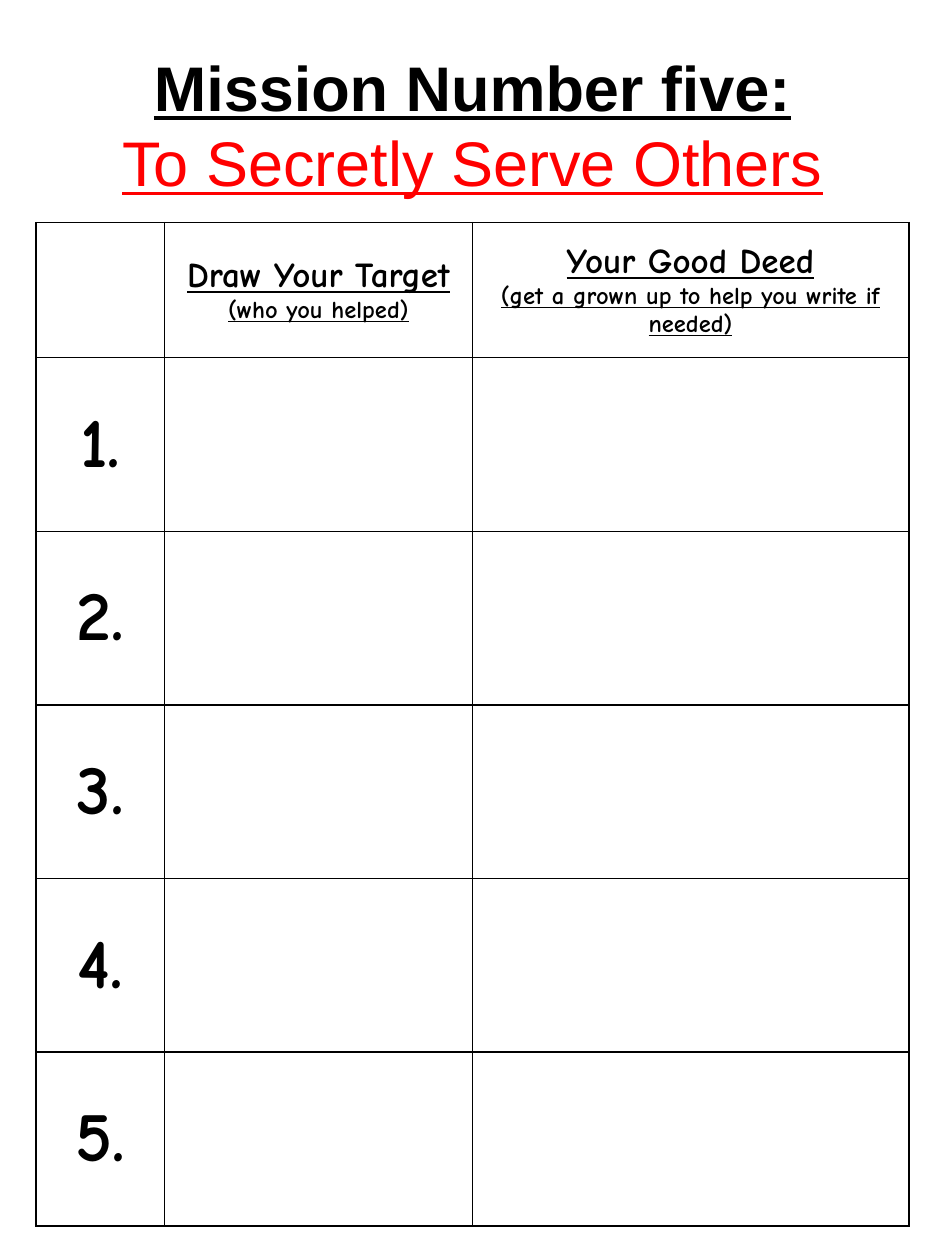
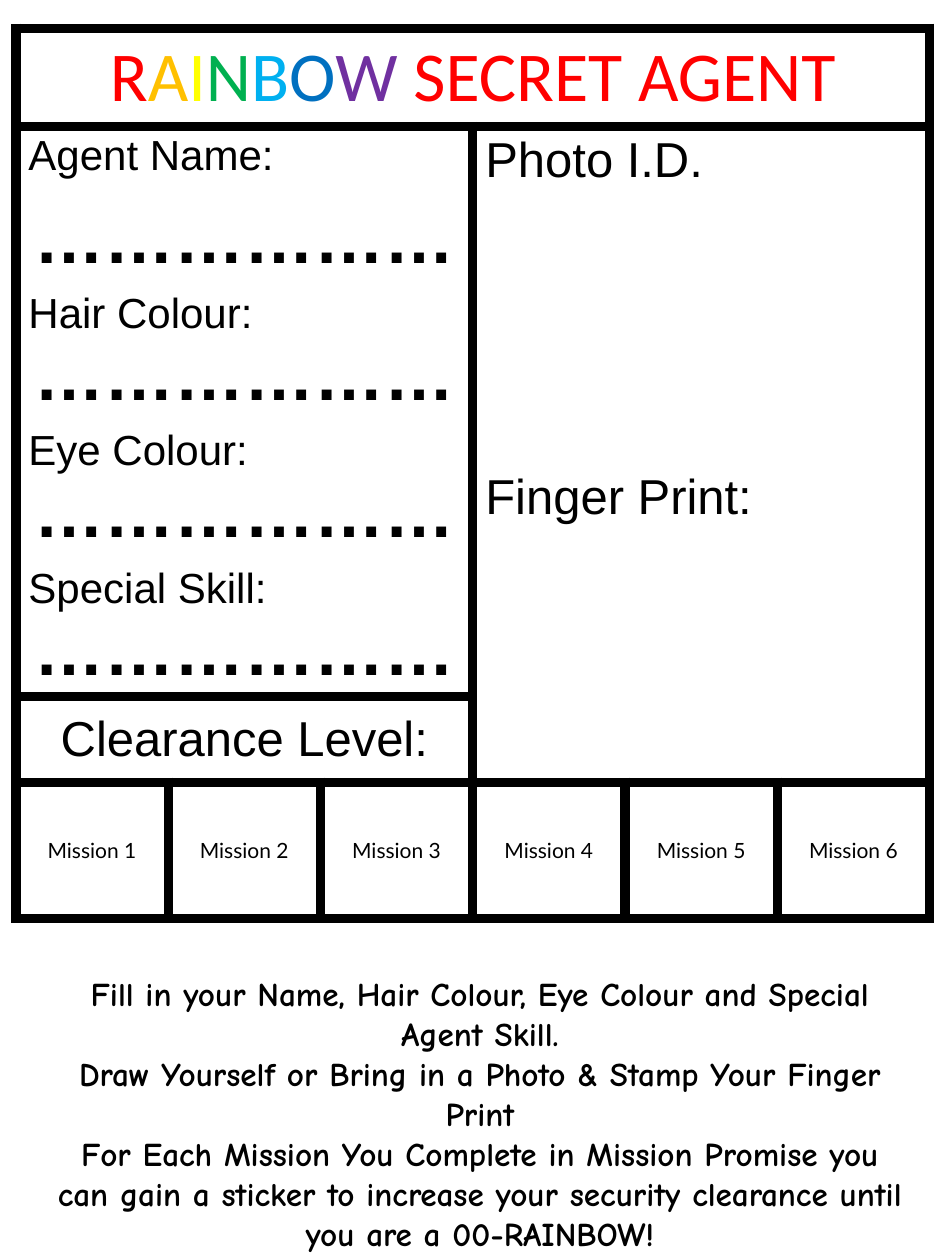
from lxml.etree import SubElement
from pptx import Presentation
from pptx.dml.color import RGBColor
from pptx.enum.text import MSO_ANCHOR as Anchor, MSO_AUTO_SIZE as AutoSize, PP_ALIGN as Align
from pptx.oxml.ns import qn
from pptx.util import Cm, Pt

# Shared look
BLACK = RGBColor(0x00, 0x00, 0x00)
RED = RGBColor(0xFF, 0x00, 0x00)
AMBER = RGBColor(0xFF, 0xC0, 0x00)
YELLOW = RGBColor(0xFF, 0xFF, 0x00)
GREEN = RGBColor(0x00, 0xB0, 0x50)
SKY = RGBColor(0x00, 0xB0, 0xF0)
BLUE = RGBColor(0x00, 0x70, 0xC0)
PURPLE = RGBColor(0x70, 0x30, 0xA0)
HEADING_FONT, HAND_FONT = "Arial", "Comic Neue"
BANNER_FONT, BADGE_FONT = "Calibri", "Lato"
TITLE_ONLY, BLANK = 5, 6
DOTS = "………………"


def write(frame, text, first=False, same_line=False, size=20, font=HEADING_FONT, color=BLACK,
          bold=False, underline=False, align=Align.CENTER, before=0, line=None):
    """Add text to a frame, as a new paragraph unless first or same_line."""
    paragraph = frame.paragraphs[-1] if first or same_line else frame.add_paragraph()
    if not same_line:
        paragraph.alignment = align
        paragraph.space_before = Pt(before)
        if line:
            paragraph.line_spacing = Pt(line)
    run = paragraph.add_run()
    run.text = text
    run.font.size, run.font.name = Pt(size), font
    run.font.bold, run.font.underline = bold, underline
    run.font.color.rgb = color


def draw_borders(cell, sides, width):
    """Draw the named sides of a cell (L, R, T, B) and clear the others."""
    properties = cell._tc.get_or_add_tcPr()
    for side in "LRTB":
        border = SubElement(properties, qn(f"a:ln{side}"), w=str(Pt(width)))
        if side in sides:
            fill = SubElement(border, qn("a:solidFill"))
            SubElement(fill, qn("a:srgbClr"), val=str(BLACK))
        else:
            SubElement(border, qn("a:noFill"))
    cell.fill.background()


def add_grid(slide, left, top, widths, heights):
    """Add an unstyled table with the given column widths and row heights in cm."""
    table = slide.shapes.add_table(len(heights), len(widths), Cm(left), Cm(top),
                                   Cm(sum(widths)), Cm(sum(heights))).table
    table.first_row = table.horz_banding = False
    for column, width in zip(table.columns, widths):
        column.width = Cm(width)
    for row, height in zip(table.rows, heights):
        row.height = Cm(height)
    return table


def add_block(table, row, column, rows=1, columns=1, sides="LRTB", width=6, anchor=Anchor.TOP):
    """Merge a block of cells, draw its outer borders and return its text frame."""
    for r in range(row, row + rows):
        for c in range(column, column + columns):
            # The first cell carries every border of the merged block
            origin = (r, c) == (row, column)
            edges = {"L": c == column, "R": c == column + columns - 1,
                     "T": r == row, "B": r == row + rows - 1}
            draw_borders(table.cell(r, c), [s for s in sides if origin or edges[s]], width)
    block = table.cell(row, column)
    if rows * columns > 1:
        block.merge(table.cell(row + rows - 1, column + columns - 1))
    block.vertical_anchor = anchor
    block.margin_bottom = Cm(0.05) if anchor == Anchor.TOP else Cm(0.13)
    return block.text_frame


def place_title(slide, left, top, width, height):
    title = slide.shapes.title
    title.left, title.top, title.width, title.height = Cm(left), Cm(top), Cm(width), Cm(height)
    frame = title.text_frame
    frame.auto_size, frame.vertical_anchor = AutoSize.NONE, Anchor.TOP
    frame.margin_top = Cm(0.14)
    style = dict(size=36, underline=True, line=43)
    write(frame, "Mission Number five:", first=True, bold=True, **style)
    write(frame, "To Secretly Serve Others", color=RED, **style)


def place_deed_table(slide, left, top):
    table = add_grid(slide, left, top, [2.59, 6.2, 8.8], [2.72] + [3.5] * 5)
    frames = [[add_block(table, r, c, width=1, anchor=Anchor.MIDDLE) for c in range(3)]
              for r in range(6)]
    headings = [("Draw Your Target", "(who you helped)"),
                ("Your Good Deed", "(get a grown up to help you write if needed)")]
    style = dict(font=HAND_FONT, bold=True)
    for frame, (heading, hint) in zip(frames[0][1:], headings):
        write(frame, heading, first=True, underline=True, **style)
        write(frame, hint, size=14, underline=True, **style)
    for number in range(1, 6):
        write(frames[number][0], f"{number}.", first=True, size=40, **style)


def place_agent_card(slide, left, top):
    table = add_grid(slide, left, top, [3.07] * 6,
                     [1.98, 3.18, 2.77, 0.86, 1.91, 2.77, 1.73, 2.74])
    # Banner
    banner = add_block(table, 0, 0, columns=6)
    letters = zip("RAINBOW", [RED, AMBER, YELLOW, GREEN, SKY, BLUE, PURPLE])
    for index, (text, color) in enumerate([*letters, (" SECRET AGENT", RED)]):
        write(banner, text, first=index == 0, same_line=index > 0,
              size=40, font=BANNER_FONT, color=color)
    # Details to fill in: label, row, rows, sides, gap above the dots
    details = [("Agent Name:", 1, 1, "LRT", 12), ("Hair Colour:", 2, 1, "LR", 0),
               ("Eye Colour:", 3, 2, "LR", 0), ("Special Skill:", 5, 1, "LRB", 0)]
    for label, row, rows, sides, gap in details:
        frame = add_block(table, row, 0, rows, 3, sides)
        write(frame, label, first=True, size=24, align=Align.LEFT)
        write(frame, DOTS, size=40, bold=True, before=gap)
    # Photo and finger print
    for label, row, sides in [("Photo I.D.", 1, "LRT"), ("Finger Print:", 4, "LRB")]:
        frame = add_block(table, row, 3, 3, 3, sides)
        write(frame, label, first=True, size=28, align=Align.LEFT)
    # Clearance level and mission badges
    clearance = add_block(table, 6, 0, columns=3, anchor=Anchor.MIDDLE)
    write(clearance, "Clearance Level:", first=True, size=28)
    for column in range(6):
        badge = add_block(table, 7, column, anchor=Anchor.MIDDLE)
        write(badge, f"Mission {column + 1}", first=True, size=12, font=BADGE_FONT)


def place_instructions(slide, left, top, width, height):
    frame = slide.shapes.add_textbox(Cm(left), Cm(top), Cm(width), Cm(height)).text_frame
    frame.word_wrap = True
    lines = [
        "Fill in your Name, Hair Colour, Eye Colour and Special Agent Skill.",
        "Draw Yourself or Bring in a Photo & Stamp Your Finger Print",
        "For Each Mission You Complete in Mission Promise you can gain a sticker "
        "to increase your security clearance until you are a 00-RAINBOW!",
    ]
    for index, text in enumerate(lines):
        write(frame, text, first=index == 0, size=19, font=HAND_FONT, bold=True, line=22.9)


def build_mission_slide(presentation):
    slide = presentation.slides.add_slide(presentation.slide_layouts[TITLE_ONLY])
    place_title(slide, 0, 0.84, 19.05, 3.33)
    place_deed_table(slide, 0.73, 4.49)


def build_card_slide(presentation):
    slide = presentation.slides.add_slide(presentation.slide_layouts[BLANK])
    place_agent_card(slide, 0.32, 0.57)
    place_instructions(slide, 0.91, 19.49, 17.53, 5.91)


def main():
    presentation = Presentation()
    presentation.slide_width, presentation.slide_height = Cm(19.05), Cm(25.4)
    build_mission_slide(presentation)
    build_card_slide(presentation)
    presentation.save("out.pptx")


if __name__ == "__main__":
    main()
